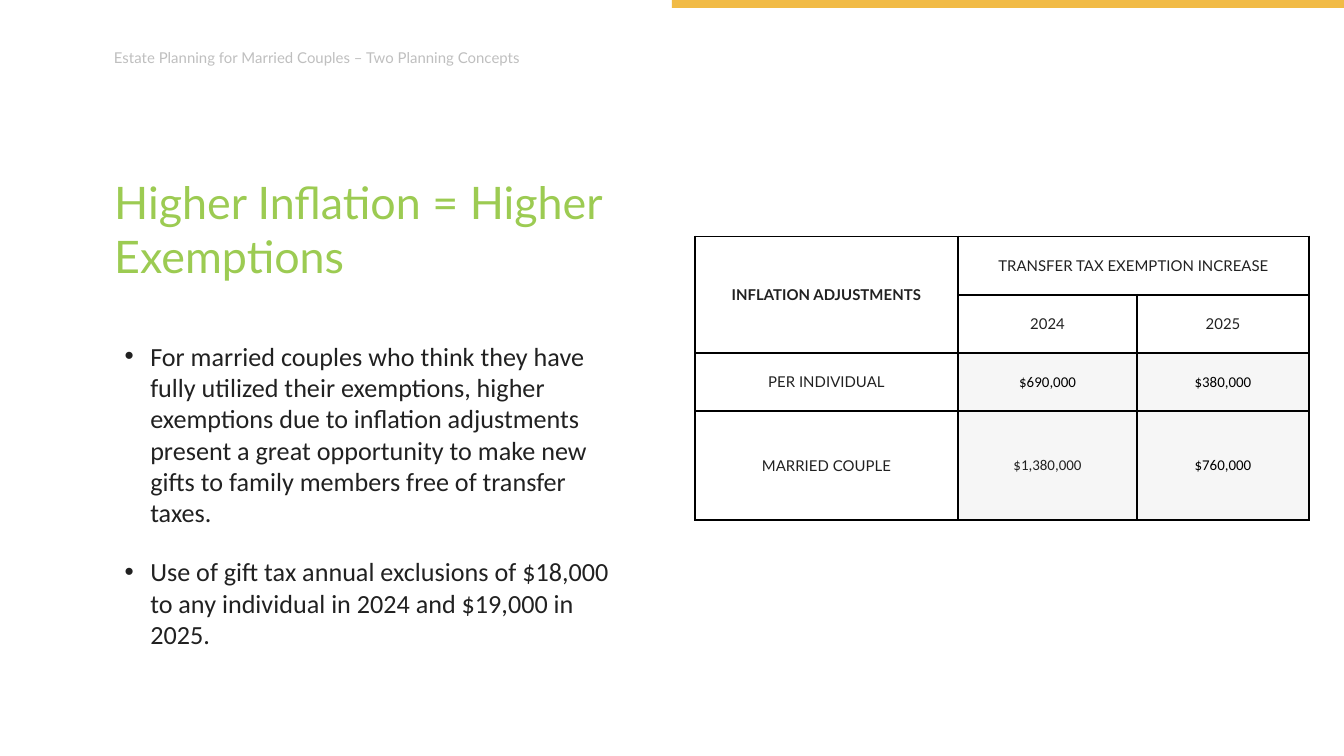
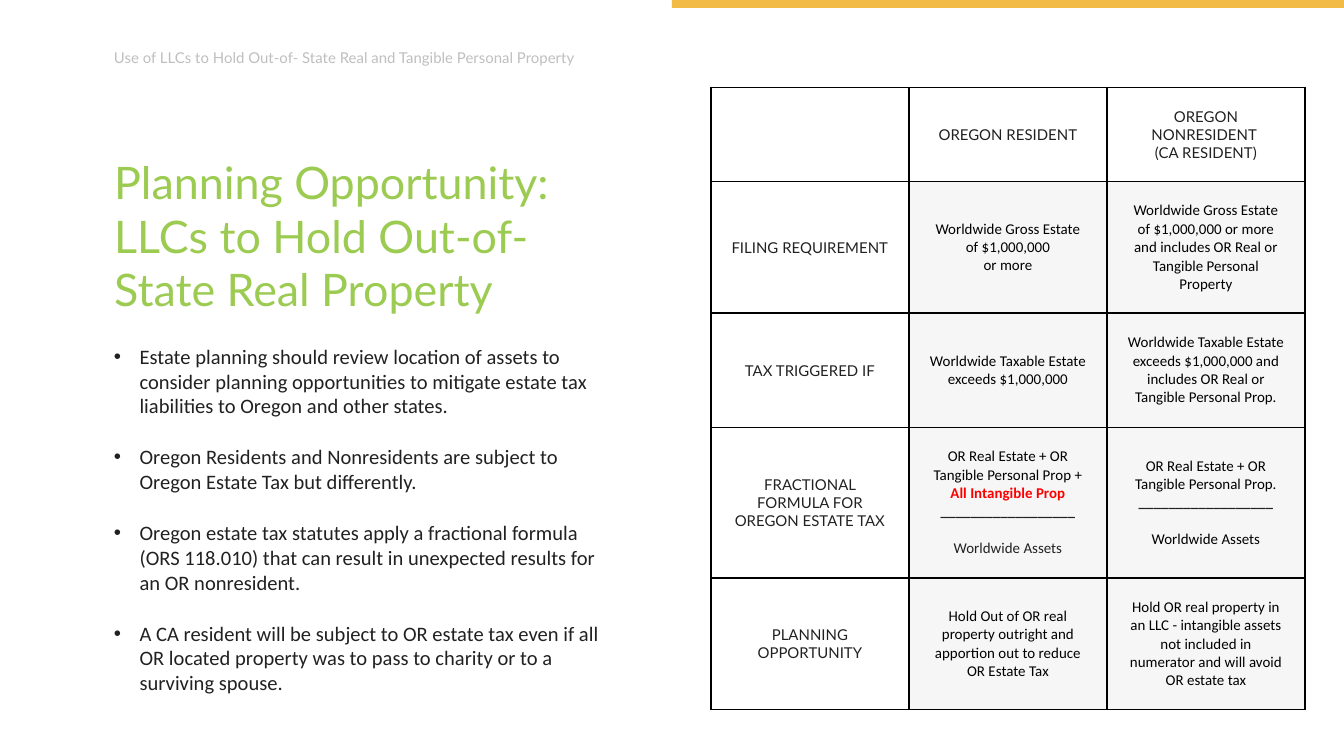
from dataclasses import dataclass
from typing import NamedTuple

from lxml import etree
from pptx import Presentation
from pptx import util as u
from pptx.dml.color import RGBColor
from pptx.enum import shapes, text
from pptx.oxml import ns


class Style(NamedTuple):
    font: str
    size: float
    color: str
    bold: bool = False


@dataclass(frozen=True)
class Theme:
    """Colours and type of the whole deck."""
    band: str = "F1BB46"
    white: str = "FFFFFF"
    shade: str = "F6F6F6"
    border: str = "000000"
    header: Style = Style("Lato", 8, "BFBFBF")
    title: Style = Style("Lato", 24, "9CCB52")
    bullet: Style = Style("Calibri", 14, "212121")
    label: Style = Style("Lato", 8, "212121")
    value: Style = Style("Calibri", 8, "000000")
    soft_value: Style = Style("Calibri", 8, "212121")
    alert: Style = Style("Calibri", 8, "FF0000", True)


THEME = Theme()
SLIDE_WIDTH = u.Inches(10)
SLIDE_HEIGHT = SLIDE_WIDTH * 9 // 16
MARGIN = 0.75
TEXT_WIDTH = 3.83
CELL_INSET = 0.15
BULLET_INDENT = 0.19


class Span(NamedTuple):
    text: str
    style: Style


class Line(NamedTuple):
    spans: tuple[Span, ...]
    before: float = 0


@dataclass(frozen=True)
class Cell:
    lines: tuple[Line, ...] = ()
    fill: str = THEME.white


@dataclass(frozen=True)
class Grid:
    left: float
    top: float
    columns: tuple[float, ...]
    rows: tuple[float, ...]
    cells: list[list[Cell]]
    merges: tuple[tuple[int, int, int, int], ...] = ()


@dataclass(frozen=True)
class Page:
    header: str
    header_width: float
    title: str
    title_top: float
    bullets: tuple[str, ...]
    bullet_left: float
    bullet_top: float
    bullet_size: float
    grid: Grid


# Cell builders

def styled_lines(style: Style, texts: tuple[str, ...]) -> tuple[Line, ...]:
    return tuple(Line((Span(words, style),)) for words in texts)


def label(*texts: str, bold: bool = False) -> Cell:
    return Cell(styled_lines(THEME.label._replace(bold=bold), texts))


def value(*texts: str, style: Style = THEME.value) -> Cell:
    return Cell(styled_lines(style, texts), THEME.shade)


def fraction(numerator: tuple[Span, ...], denominator: Span) -> Cell:
    rule = Span("_" * 18, THEME.soft_value._replace(bold=True))
    one_line = 9.8
    return Cell((Line(numerator), Line((rule,)), Line((denominator,), one_line)), THEME.shade)


# Content

NUMERATOR = "OR Real Estate + OR Tangible Personal Prop"

INFLATION_GRID = Grid(
    left=5.17, top=1.76, columns=(1.96, 1.33, 1.28), rows=(0.43, 0.43, 0.43, 0.81),
    cells=[
        [label("INFLATION ADJUSTMENTS", bold=True), label("TRANSFER TAX EXEMPTION INCREASE"), Cell()],
        [Cell(), label("2024"), label("2025")],
        [label("PER INDIVIDUAL"), value("$690,000"), value("$380,000")],
        [label("MARRIED COUPLE"), value("$1,380,000", style=THEME.soft_value), value("$760,000")],
    ],
    merges=((0, 0, 1, 0), (0, 1, 0, 2)),
)

OREGON_GRID = Grid(
    left=5.29, top=0.65, columns=(4.42 / 3,) * 3, rows=(0.7, 0.98, 0.85, 1.12, 0.98),
    cells=[
        [Cell(), label("OREGON RESIDENT"), label("OREGON NONRESIDENT ", "(CA RESIDENT)")],
        [
            label("FILING REQUIREMENT"),
            value("Worldwide Gross Estate of $1,000,000", "or more"),
            value("Worldwide Gross Estate of $1,000,000 or more and includes "
                  "OR Real or Tangible Personal Property"),
        ],
        [
            label("TAX TRIGGERED IF"),
            value("Worldwide Taxable Estate exceeds $1,000,000"),
            value("Worldwide Taxable Estate exceeds $1,000,000 and includes "
                  "OR Real or Tangible Personal Prop."),
        ],
        [
            label("FRACTIONAL FORMULA FOR OREGON ESTATE TAX"),
            fraction(
                (Span(NUMERATOR + " + ", THEME.value), Span("All Intangible Prop", THEME.alert)),
                Span("Worldwide Assets", THEME.soft_value),
            ),
            fraction((Span(NUMERATOR + ".", THEME.value),), Span("Worldwide Assets", THEME.value)),
        ],
        [
            label("PLANNING OPPORTUNITY"),
            value("Hold Out of OR real property outright and apportion out to reduce OR Estate Tax"),
            value("Hold OR real property in an LLC - intangible assets not included "
                  "in numerator and will avoid OR estate tax"),
        ],
    ],
)

PAGES = (
    Page(
        header="Estate Planning for Married Couples – Two Planning Concepts",
        header_width=3.83,
        title="Higher Inflation = Higher Exemptions",
        title_top=1.23,
        bullets=(
            "For married couples who think they have fully utilized their exemptions, higher "
            "exemptions due to inflation adjustments present a great opportunity to make new "
            "gifts to family members free of transfer taxes.",
            "Use of gift tax annual exclusions of $18,000 to any individual in 2024 and "
            "$19,000 in 2025.",
        ),
        bullet_left=0.83, bullet_top=2.48, bullet_size=14,
        grid=INFLATION_GRID,
    ),
    Page(
        header="Use of LLCs to Hold Out-of- State Real and Tangible Personal Property",
        header_width=4.17,
        title="Planning Opportunity: LLCs to Hold Out-of-State Real Property",
        title_top=1.48,
        bullets=(
            "Estate planning should review location of assets to consider planning opportunities "
            "to mitigate estate tax liabilities to Oregon and other states.",
            "Oregon Residents and Nonresidents are subject to Oregon Estate Tax but differently.",
            "Oregon estate tax statutes apply a fractional formula (ORS 118.010) that can result "
            "in unexpected results for an OR nonresident.",
            "A CA resident will be subject to OR estate tax even if all OR located property was "
            "to pass to charity or to a surviving spouse.",
        ),
        bullet_left=MARGIN, bullet_top=2.51, bullet_size=11,
        grid=OREGON_GRID,
    ),
)


# Drawing

def format_run(run, style: Style) -> None:
    run.font.name = style.font
    run.font.size = u.Pt(style.size)
    run.font.bold = style.bold
    run.font.color.rgb = RGBColor.from_string(style.color)


def fill_paragraph(para, words: str, style: Style) -> None:
    para.text = words
    para.space_before = u.Pt(round(style.size * 0.2, 1))
    format_run(para.runs[0], style)


def paragraph_at(frame, index: int):
    return frame.paragraphs[0] if index == 0 else frame.add_paragraph()


def add_box(slide, left: float, top: float, width: float, height: float):
    box = slide.shapes.add_textbox(u.Inches(left), u.Inches(top), u.Inches(width), u.Inches(height))
    box.text_frame.word_wrap = True
    return box.text_frame


def add_band(slide) -> None:
    band = slide.shapes.add_shape(
        shapes.MSO_SHAPE.RECTANGLE, u.Inches(5), u.Inches(0), u.Inches(5), u.Inches(0.06))
    band.shadow.inherit = False
    band.fill.solid()
    band.fill.fore_color.rgb = RGBColor.from_string(THEME.band)
    band.line.fill.background()


def place_title(slide, words: str, top: float) -> None:
    title = slide.shapes.title
    title.left, title.top = u.Inches(MARGIN), u.Inches(top)
    title.width, title.height = u.Inches(TEXT_WIDTH), u.Inches(0.92)
    frame = title.text_frame
    frame.word_wrap = True
    frame.auto_size = text.MSO_AUTO_SIZE.NONE
    frame.vertical_anchor = text.MSO_ANCHOR.BOTTOM
    fill_paragraph(frame.paragraphs[0], words, THEME.title)
    frame.paragraphs[0].alignment = text.PP_ALIGN.LEFT


def add_bullets(slide, page: Page) -> None:
    frame = add_box(slide, page.bullet_left, page.bullet_top, TEXT_WIDTH, 1.75)
    style = THEME.bullet._replace(size=page.bullet_size)
    for index, words in enumerate(page.bullets):
        para = paragraph_at(frame, index)
        fill_paragraph(para, words, style)
        para.space_after = u.Pt(12)
        properties = para._p.get_or_add_pPr()
        properties.set("marL", str(u.Inches(BULLET_INDENT)))
        properties.set("indent", str(-u.Inches(BULLET_INDENT)))
        etree.SubElement(properties, ns.qn("a:buFont"), typeface="Arial")
        etree.SubElement(properties, ns.qn("a:buChar"), char="•")


def add_borders(cell) -> None:
    properties = cell._tc.get_or_add_tcPr()
    for side in ("lnL", "lnR", "lnT", "lnB"):
        line = etree.SubElement(properties, ns.qn(f"a:{side}"), w=str(u.Pt(1)))
        solid = etree.SubElement(line, ns.qn("a:solidFill"))
        etree.SubElement(solid, ns.qn("a:srgbClr"), val=THEME.border)


def draw_cell(cell, content: Cell) -> None:
    add_borders(cell)
    cell.fill.solid()
    cell.fill.fore_color.rgb = RGBColor.from_string(content.fill)
    cell.margin_left = cell.margin_right = u.Inches(CELL_INSET)
    cell.margin_top = cell.margin_bottom = u.Inches(CELL_INSET)
    cell.vertical_anchor = text.MSO_ANCHOR.MIDDLE
    for index, line in enumerate(content.lines):
        para = paragraph_at(cell.text_frame, index)
        para.alignment = text.PP_ALIGN.CENTER
        para.space_before = u.Pt(line.before)
        for span in line.spans:
            run = para.add_run()
            run.text = span.text
            format_run(run, span.style)


def add_grid(slide, grid: Grid) -> None:
    table = slide.shapes.add_table(
        len(grid.rows), len(grid.columns), u.Inches(grid.left), u.Inches(grid.top),
        u.Inches(sum(grid.columns)), u.Inches(sum(grid.rows))).table
    table.first_row = table.horz_banding = False
    for column, width in zip(table.columns, grid.columns):
        column.width = u.Inches(width)
    for row, height, contents in zip(table.rows, grid.rows, grid.cells):
        row.height = u.Inches(height)
        for cell, content in zip(row.cells, contents):
            draw_cell(cell, content)
    for top, left, bottom, right in grid.merges:
        table.cell(top, left).merge(table.cell(bottom, right))


def add_page(deck, page: Page) -> None:
    slide = deck.slides.add_slide(deck.slide_layouts.get_by_name("Title Only"))
    add_band(slide)
    header = add_box(slide, MARGIN, 0.31, page.header_width, 0.25)
    fill_paragraph(header.paragraphs[0], page.header, THEME.header)
    place_title(slide, page.title, page.title_top)
    add_bullets(slide, page)
    add_grid(slide, page.grid)


def main() -> None:
    deck = Presentation()
    deck.slide_width, deck.slide_height = SLIDE_WIDTH, SLIDE_HEIGHT
    for page in PAGES:
        add_page(deck, page)
    deck.save("out.pptx")


if __name__ == "__main__":
    main()
